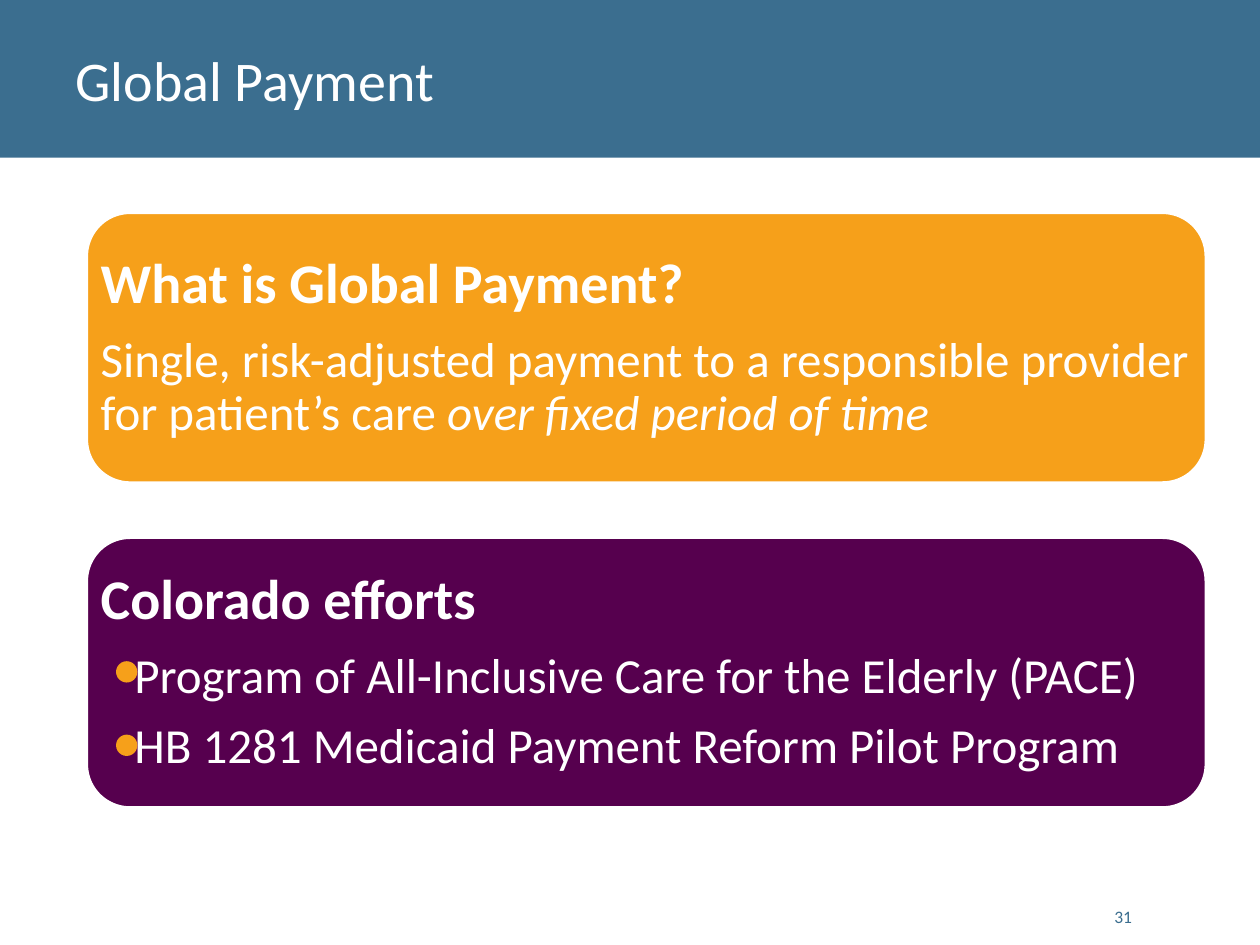
from pptx import Presentation
from pptx.dml.color import RGBColor
from pptx.enum.shapes import MSO_SHAPE
from pptx.enum.text import MSO_ANCHOR, PP_ALIGN
from pptx.util import Cm, Pt

WHITE = RGBColor(0xFF, 0xFF, 0xFF)
BLUE = RGBColor(0x3B, 0x6E, 0x8F)
ORANGE = RGBColor(0xF6, 0xA0, 0x1A)
PURPLE = RGBColor(0x56, 0x00, 0x4E)
FONT = "Calibri"

# Content: each body line is a list of (text, italic) parts
TITLE = "Global Payment"
PAGE_NUMBER = "31"
PANELS = [
    {
        "heading": "What is Global Payment?",
        "fill": ORANGE,
        "dotted": False,
        "lines": [[
            ("Single, risk-adjusted payment to a responsible provider for patient’s care ", False),
            ("over fixed period of time", True),
        ]],
    },
    {
        "heading": "Colorado efforts",
        "fill": PURPLE,
        "dotted": True,
        "lines": [
            [("Program of All-Inclusive Care for the Elderly (PACE)", False)],
            [("HB 1281 Medicaid Payment Reform Pilot Program", False)],
        ],
    },
]

# Layout in cm
SLIDE_W, SLIDE_H = 25.4, 19.05
BANNER_H = 3.18
PANEL_X, PANEL_Y, PANEL_W, PANEL_H = 1.7, 4.24, 22.66, 5.54
PANEL_PITCH = 6.55
INSET = 0.33
CORNER_INSET = 0.27  # text margin that the rounded corner already adds
LINE_INDENT = 0.68
DOT_SIZE, DOT_X, DOT_DROP, DOT_PITCH = 0.43, 2.34, 2.54, 1.48
HEADING_SIZE, BODY_SIZE = 32, 28


def add_filled(slide, kind, x, y, w, h, fill):
    shape = slide.shapes.add_shape(kind, Cm(x), Cm(y), Cm(w), Cm(h))
    shape.shadow.inherit = False
    shape.fill.solid()
    shape.fill.fore_color.rgb = fill
    shape.line.fill.background()
    return shape


def style(font, size, color, bold=False):
    font.name = FONT
    font.size = Pt(size)
    font.bold = bold
    font.color.rgb = color


def add_label(slide, text, x, y, w, h, size, color, anchor, align):
    frame = slide.shapes.add_textbox(Cm(x), Cm(y), Cm(w), Cm(h)).text_frame
    frame.word_wrap = True
    frame.vertical_anchor = anchor
    frame.text = text
    frame.paragraphs[0].alignment = align
    style(frame.paragraphs[0].runs[0].font, size, color)


def space(paragraph, size):
    paragraph.alignment = PP_ALIGN.LEFT
    paragraph.line_spacing = 0.9
    paragraph.space_after = Pt(round(size * 0.35, 1))


def add_panel(slide, panel, y):
    box = add_filled(slide, MSO_SHAPE.ROUNDED_RECTANGLE,
                     PANEL_X, y, PANEL_W, PANEL_H, panel["fill"])
    box.line.color.rgb = WHITE
    box.line.width = Pt(4.33)

    frame = box.text_frame
    frame.word_wrap = True
    frame.vertical_anchor = MSO_ANCHOR.MIDDLE
    frame.margin_left = frame.margin_right = Cm(INSET - CORNER_INSET)
    frame.margin_top = frame.margin_bottom = Cm(INSET - CORNER_INSET)

    frame.text = panel["heading"]
    heading = frame.paragraphs[0]
    space(heading, HEADING_SIZE)
    style(heading.runs[0].font, HEADING_SIZE, WHITE, bold=True)

    for index, parts in enumerate(panel["lines"]):
        line = frame.add_paragraph()
        space(line, BODY_SIZE)
        for text, italic in parts:
            run = line.add_run()
            run.text = text
            style(run.font, BODY_SIZE, WHITE)
            run.font.italic = italic
        if panel["dotted"]:
            line._p.get_or_add_pPr().set("marL", str(Cm(LINE_INDENT)))
            add_filled(slide, MSO_SHAPE.OVAL, DOT_X, y + DOT_DROP + index * DOT_PITCH,
                       DOT_SIZE, DOT_SIZE, ORANGE)


def main():
    prs = Presentation()
    prs.slide_width, prs.slide_height = Cm(SLIDE_W), Cm(SLIDE_H)
    slide = prs.slides.add_slide(prs.slide_layouts[6])

    # Banner, title and page number
    add_filled(slide, MSO_SHAPE.RECTANGLE, 0, 0, SLIDE_W, BANNER_H, BLUE)
    add_label(slide, TITLE, 1.27, 0, 22.86, BANNER_H, 32, WHITE,
              MSO_ANCHOR.MIDDLE, PP_ALIGN.LEFT)
    add_label(slide, PAGE_NUMBER, 22.05, 17.8, 1.02, 1.02, 10, BLUE,
              MSO_ANCHOR.BOTTOM, PP_ALIGN.RIGHT)

    # Stacked panels
    for index, panel in enumerate(PANELS):
        add_panel(slide, panel, PANEL_Y + index * PANEL_PITCH)

    prs.save("out.pptx")


if __name__ == "__main__":
    main()
